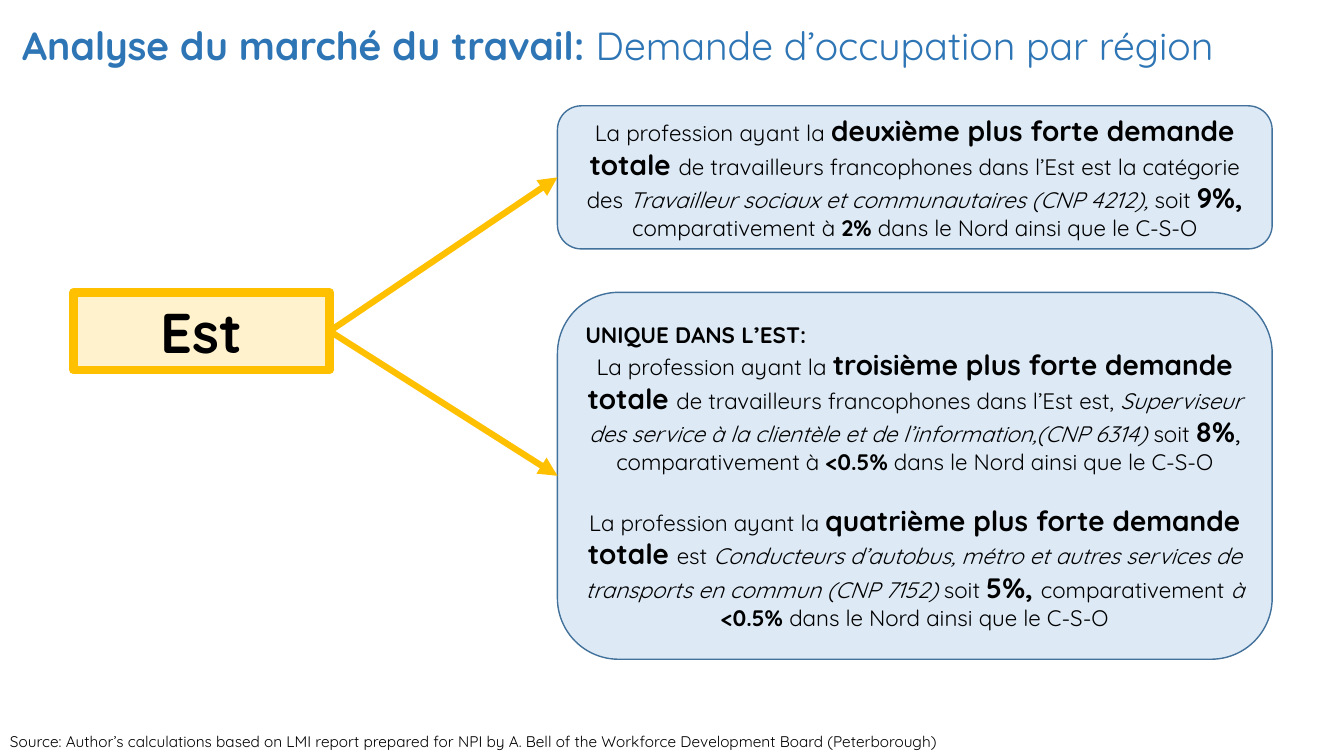
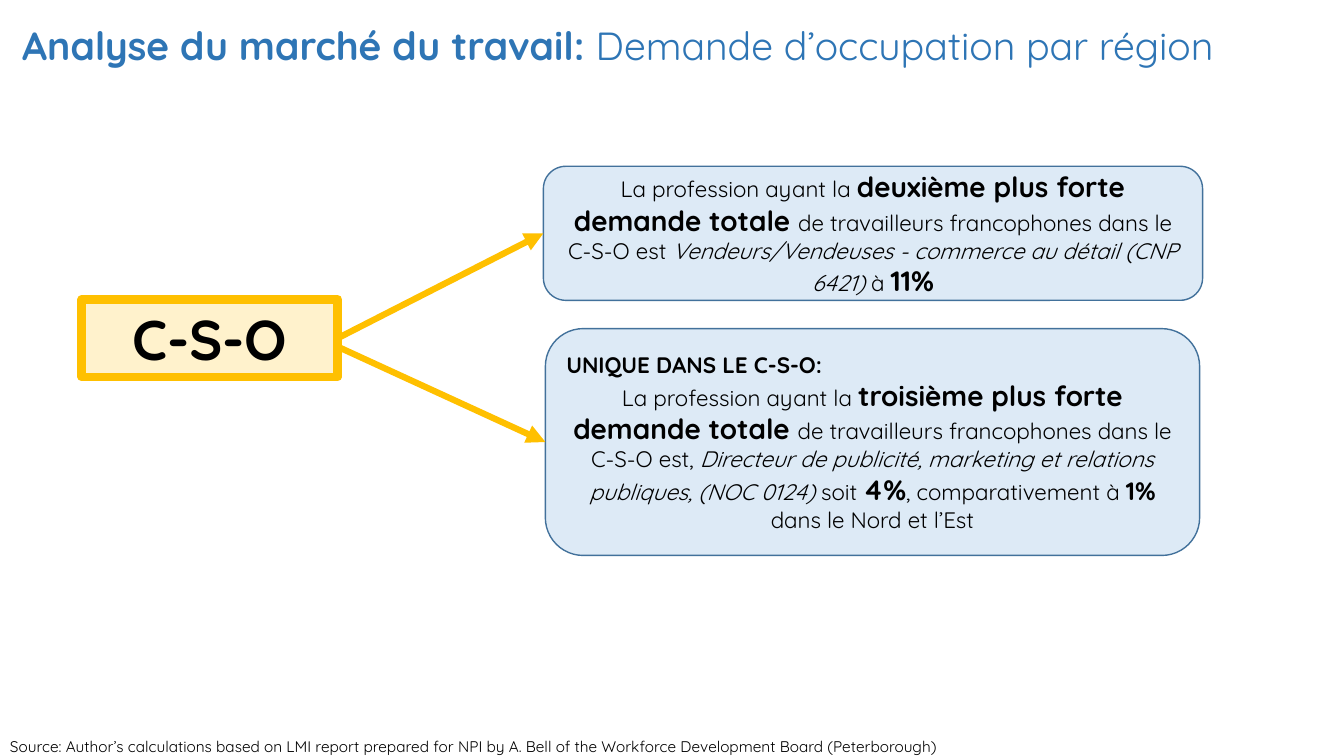
from dataclasses import dataclass

import pptx
import pptx.dml.color
import pptx.enum.shapes
import pptx.enum.text
import pptx.oxml
import pptx.oxml.ns
import pptx.util

ALIGN = pptx.enum.text.PP_ALIGN
ANCHOR = pptx.enum.text.MSO_ANCHOR
SHAPE = pptx.enum.shapes.MSO_SHAPE
SLIDE_WIDTH = pptx.util.Inches(13.33)
SLIDE_HEIGHT = pptx.util.Inches(7.5)
RIGHT_SIDE, LEFT_SIDE = 3, 1  # connection sites of a rectangle


@dataclass(frozen=True)
class Theme:
    font: str = "Quicksand"
    ink: str = "000000"
    title: str = "2E75B5"
    accent: str = "FFC000"
    region_fill: str = "FFF2CC"
    callout_fill: str = "DDEAF6"
    callout_line: str = "42719B"
    title_size: int = 28
    region_size: int = 40
    body_size: int = 16
    medium_size: int = 18
    large_size: int = 20
    source_size: int = 11
    paragraph_gap: int = 20


THEME = Theme()

# Name of a span style: size, bold, italic
SPAN_STYLES = {
    "plain": (THEME.body_size, False, False),
    "bold": (THEME.body_size, True, False),
    "italic": (THEME.body_size, False, True),
    "medium": (THEME.medium_size, True, False),
    "large": (THEME.large_size, True, False),
    "large plain": (THEME.large_size, False, False),
}

TITLE = ("Analyse du marché du travail: ", "Demande d’occupation par région")
SOURCE = (
    "Source: Author’s calculations based on LMI report prepared for NPI "
    "by A. Bell of the Workforce Development Board (Peterborough)"
)
INTRO = ("La profession ayant la ", "plain")

# All places are percentages of the slide: left, top, width, height.
# A callout's "drop" lowers the start of its arrow below the region's middle.
EAST = {
    "region": ("Est", (5.48, 38.67, 19.05, 10.27)),
    "source_top": 96.13,
    "callouts": [
        {
            "place": (41.48, 14, 53.18, 18.93),
            "paragraphs": [[
                INTRO,
                ("deuxième plus forte demande totale ", "large"),
                ("de travailleurs francophones dans l’Est est la catégorie des ", "plain"),
                ("Travailleur sociaux et communautaires (CNP 4212), ", "italic"),
                ("soit ", "plain"),
                ("9%, ", "large"),
                ("comparativement à ", "plain"),
                ("2% ", "bold"),
                ("dans le Nord ainsi que le C-S-O", "plain"),
            ]],
        },
        {
            "place": (41.48, 38.67, 53.18, 48.53),
            "heading": "UNIQUE DANS L’EST:",
            "paragraphs": [
                [
                    INTRO,
                    ("troisième plus forte demande totale ", "large"),
                    ("de travailleurs francophones dans l’Est est, ", "plain"),
                    ("Superviseur des service à la clientèle et de l’information,(CNP 6314) ", "italic"),
                    ("soit ", "plain"),
                    ("8%", "large"),
                    (", ", "large plain"),
                    ("comparativement à ", "plain"),
                    ("<0.5%", "bold"),
                    (" dans le Nord ainsi que le C-S-O", "plain"),
                ],
                [
                    INTRO,
                    ("quatrième plus forte demande totale ", "large"),
                    ("est ", "plain"),
                    ("Conducteurs d’autobus, métro et autres services de transports en commun (CNP 7152)", "italic"),
                    (" soit ", "plain"),
                    ("5%, ", "large"),
                    ("comparativement ", "plain"),
                    ("à ", "italic"),
                    ("<0.5% ", "bold"),
                    ("dans le Nord ainsi que le C-S-O", "plain"),
                ],
            ],
        },
    ],
}

CENTRE_SOUTHWEST = {
    "region": ("C-S-O", (6.08, 39.6, 19.05, 10.27)),
    "source_top": 96.8,
    "callouts": [
        {
            "place": (40.43, 22, 49.05, 17.73),
            "paragraphs": [[
                INTRO,
                ("deuxième plus forte demande totale ", "large"),
                ("de travailleurs francophones dans le C-S-O est ", "plain"),
                ("Vendeurs/Vendeuses - commerce au détail (CNP 6421) ", "italic"),
                ("à ", "plain"),
                ("11%", "large"),
            ]],
        },
        {
            "place": (40.58, 43.47, 48.68, 30),
            "drop": 1.13,
            "heading": "UNIQUE DANS LE C-S-O:",
            "paragraphs": [[
                INTRO,
                ("troisième plus forte demande totale ", "large"),
                ("de travailleurs francophones dans le C-S-O est, ", "plain"),
                ("Directeur de publicité, marketing et relations publiques, (NOC 0124) ", "italic"),
                ("soit ", "plain"),
                ("4%", "large"),
                (", comparativement à ", "plain"),
                ("1%", "medium"),
                (" dans le Nord et l’Est", "plain"),
            ]],
        },
    ],
}


def across(percent):
    return pptx.util.Emu(round(SLIDE_WIDTH * percent / 100))


def down(percent):
    return pptx.util.Emu(round(SLIDE_HEIGHT * percent / 100))


def frame(place):
    left, top, width, height = place
    return across(left), down(top), across(width), down(height)


def rgb(value):
    return pptx.dml.color.RGBColor.from_string(value)


def set_font(paragraph, size, color=THEME.ink, bold=None):
    font = paragraph.font
    font.name = THEME.font
    font.size = pptx.util.Pt(size)
    font.color.rgb = rgb(color)
    font.bold = bold


def add_span(paragraph, text, style):
    span = paragraph.add_run()
    span.text = text
    size, span.font.bold, span.font.italic = SPAN_STYLES[style]
    span.font.size = pptx.util.Pt(size)


def add_title(page):
    title = page.shapes.title
    title.left, title.top, title.width, title.height = frame((0.9, 2.13, 96.1, 10))
    title.text_frame.auto_size = pptx.enum.text.MSO_AUTO_SIZE.NONE
    title.text_frame.vertical_anchor = ANCHOR.TOP
    para = title.text_frame.paragraphs[0]
    para.alignment = ALIGN.LEFT
    set_font(para, THEME.title_size, THEME.title)
    for text, bold in zip(TITLE, (True, False)):
        span = para.add_run()
        span.text = text
        span.font.bold = bold


def add_source(page, top):
    """Place the source line so that its box ends inside the slide."""
    box = page.shapes.add_textbox(*frame((0, top, 97.9, 3.2)))
    box.text_frame.word_wrap = True
    box.text_frame.margin_bottom = 0
    para = box.text_frame.paragraphs[0]
    para.text = SOURCE
    set_font(para, THEME.source_size)


def add_box(page, kind, place, fill, line, line_width, anchor):
    box = page.shapes.add_shape(kind, *frame(place))
    box.shadow.inherit = False
    box.fill.solid()
    box.fill.fore_color.rgb = rgb(fill)
    box.line.color.rgb = rgb(line)
    box.line.width = pptx.util.Pt(line_width)
    box.text_frame.word_wrap = True
    box.text_frame.vertical_anchor = anchor
    return box


def add_region(page, name, place):
    box = add_box(page, SHAPE.RECTANGLE, place, THEME.region_fill,
                  THEME.accent, 6, ANCHOR.TOP)
    para = box.text_frame.paragraphs[0]
    para.text = name
    para.alignment = ALIGN.CENTER
    set_font(para, THEME.region_size, bold=True)
    return box


def add_callout(page, place, paragraphs, heading=None):
    box = add_box(page, SHAPE.ROUNDED_RECTANGLE, place, THEME.callout_fill,
                  THEME.callout_line, 1, ANCHOR.MIDDLE)
    para = box.text_frame.paragraphs[0]
    if heading:
        para.text = heading
        para.alignment = ALIGN.LEFT
        set_font(para, THEME.body_size, bold=True)
        para = box.text_frame.add_paragraph()
    for index, spans in enumerate(paragraphs):
        if index:
            para = box.text_frame.add_paragraph()
            para.space_before = pptx.util.Pt(THEME.paragraph_gap)
        para.alignment = ALIGN.CENTER
        set_font(para, THEME.body_size)
        for text, style in spans:
            add_span(para, text, style)
    return box


def add_arrow(page, region, callout, drop):
    arrow = page.shapes.add_connector(
        pptx.enum.shapes.MSO_CONNECTOR.STRAIGHT,
        region.left + region.width, region.top + region.height // 2 + down(drop),
        callout.left, callout.top + callout.height // 2)
    if not drop:
        arrow.begin_connect(region, RIGHT_SIDE)
    arrow.end_connect(callout, LEFT_SIDE)
    arrow.line.color.rgb = rgb(THEME.accent)
    arrow.line.width = pptx.util.Pt(4.5)
    namespace = pptx.oxml.ns.nsdecls("a")
    arrow.line._get_or_add_ln().append(
        pptx.oxml.parse_xml(f'<a:tailEnd {namespace} type="triangle"/>'))
    arrow._element.spPr.append(pptx.oxml.parse_xml(f"<a:effectLst {namespace}/>"))


def add_region_page(deck, content):
    page = deck.slides.add_slide(deck.slide_layouts.get_by_name("Title Only"))
    add_title(page)
    region = add_region(page, *content["region"])
    for entry in content["callouts"]:
        callout = add_callout(page, entry["place"], entry["paragraphs"],
                              entry.get("heading"))
        add_arrow(page, region, callout, entry.get("drop", 0))
    add_source(page, content["source_top"])


def main():
    deck = pptx.Presentation()
    deck.slide_width, deck.slide_height = SLIDE_WIDTH, SLIDE_HEIGHT
    for content in (EAST, CENTRE_SOUTHWEST):
        add_region_page(deck, content)
    deck.save("out.pptx")


if __name__ == "__main__":
    main()
